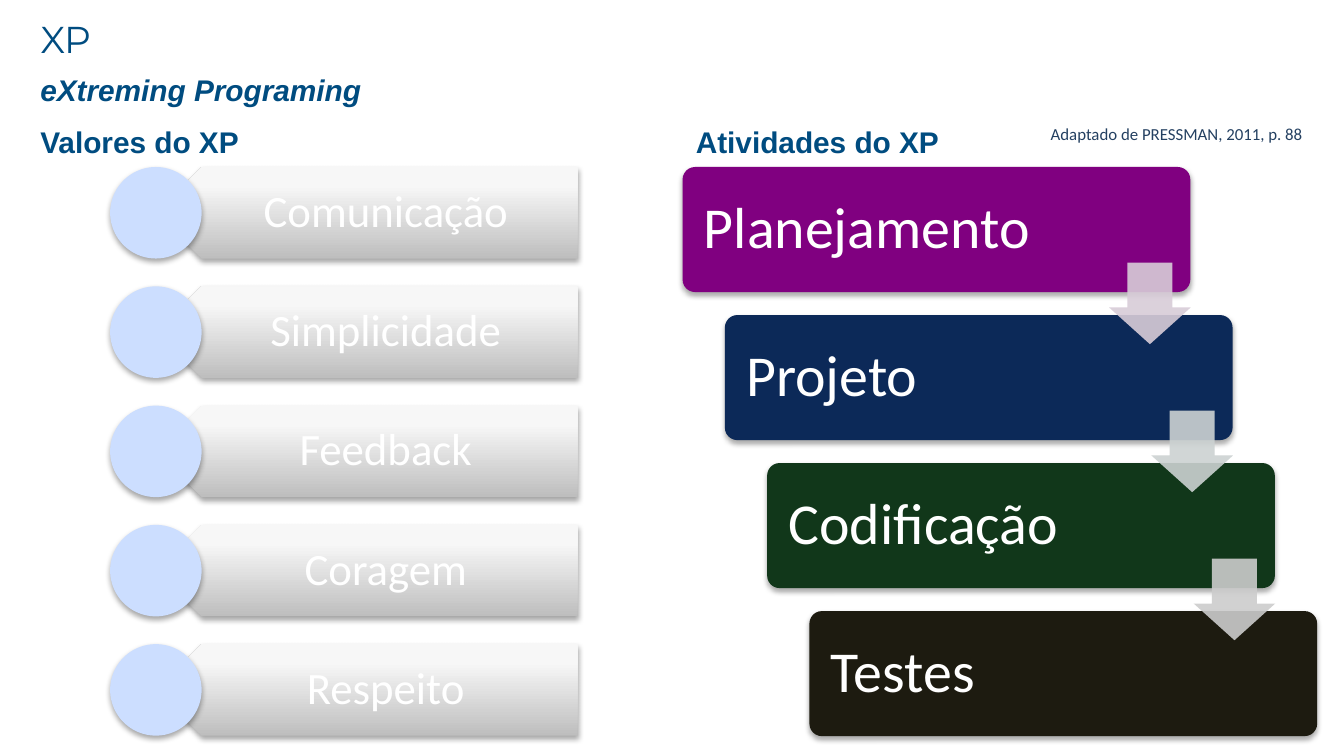
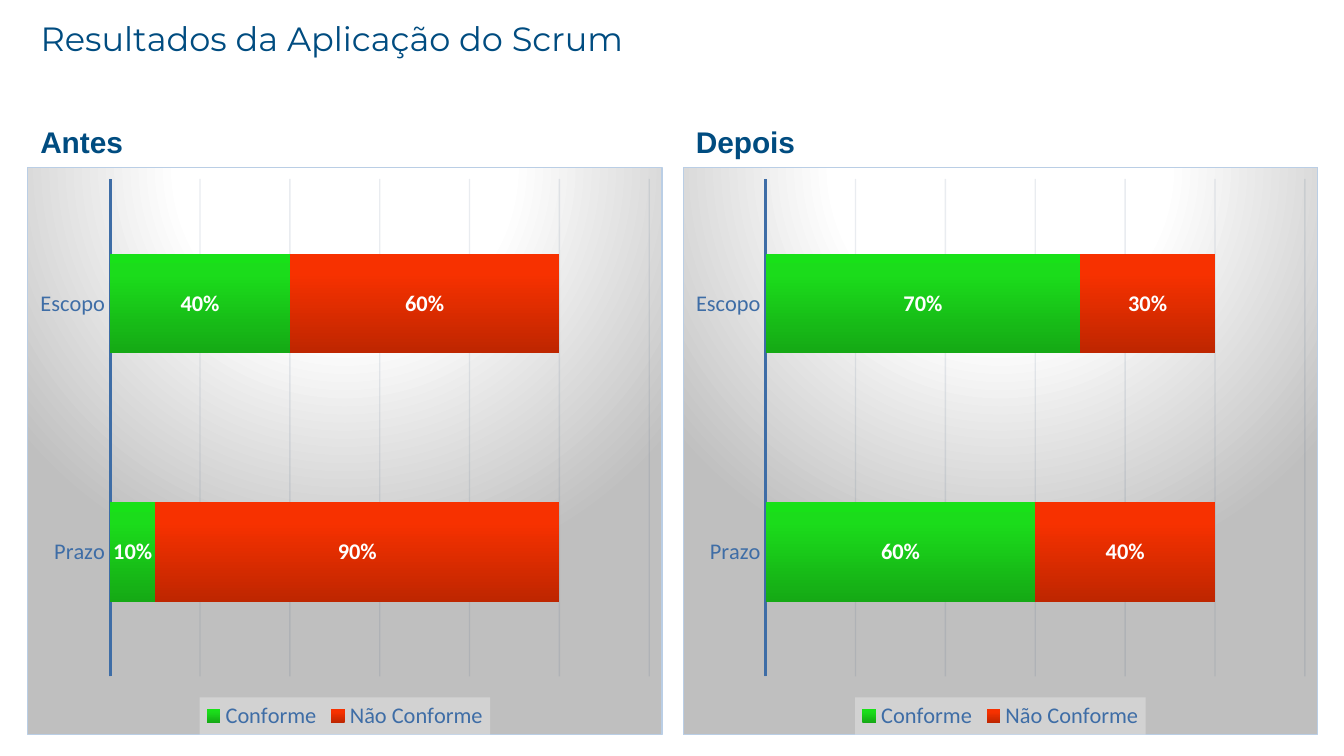
from typing import NamedTuple, Optional

from lxml import etree
from pptx import Presentation
from pptx.chart.data import CategoryChartData
from pptx.dml.color import RGBColor
from pptx.enum import chart as ch, shapes, text
from pptx.oxml.ns import nsdecls, qn
from pptx.oxml import parse_xml
from pptx.util import Pt

WHITE = RGBColor(0xFF, 0xFF, 0xFF)
HEADING = RGBColor(0x00, 0x4C, 0x80)
INK = RGBColor(0x24, 0x40, 0x61)
AXIS = RGBColor(0x3E, 0x6D, 0xA6)
GRID = RGBColor(0x29, 0x49, 0x6F)
DISC = RGBColor(0xCC, 0xDE, 0xFF)
CHART_BORDER = RGBColor(0xBA, 0xCE, 0xE5)
LEGEND_BACK = RGBColor(0xF2, 0xF2, 0xF2)

LEFT_COL, RIGHT_COL, COL_W = 14.5, 365.7, 340.5
BODY_TOP, BODY_H = 89.5, 304.5
LABEL_TOP, LABEL_H = 66.2, 19.4


class Box(NamedTuple):
    x: float
    y: float
    w: float
    h: float

    def points(self) -> list:
        return [Pt(v) for v in self]


class Style(NamedTuple):
    size: float
    color: RGBColor
    font: str = "Calibri"
    bold: bool = False
    italic: bool = False


class Gradient(NamedTuple):
    stops: tuple
    focus: Optional[tuple] = None  # left, top, right, bottom in percent


class Step(NamedTuple):
    name: str
    fill: RGBColor
    arrow: Optional[RGBColor] = None


class Results(NamedTuple):
    label: str
    x: float
    conforming: tuple
    failing: tuple


LABEL = Style(16, HEADING, "Arial", bold=True)
SUBTITLE = LABEL._replace(italic=True)
AXIS_TEXT = Style(12, AXIS)

SILVER = Gradient(((0, "BEBEBE"), (80, "F7F7F7"), (100, "F8F8F8")))
GREEN = Gradient(((0, "15A915"), (80, "1BDC1B"), (100, "18E118")))
RED = Gradient(((0, "BE2600"), (80, "F73100"), (100, "F83200")))
CHART_BACK = Gradient(((0, "FFFFFF"), (39, "FFFFFF"), (100, "BFBFBF")), (50, -80, 50, 180))

VALUES = ("Comunicação", "Simplicidade", "Feedback", "Coragem", "Respeito")
STEPS = (
    Step("Planejamento", RGBColor(0x80, 0x00, 0x80), RGBColor(0xD8, 0xCC, 0xD8)),
    Step("Projeto", RGBColor(0x0C, 0x29, 0x58), RGBColor(0xCC, 0xD2, 0xD2)),
    Step("Codificação", RGBColor(0x11, 0x37, 0x1A), RGBColor(0xCC, 0xCC, 0xCC)),
    Step("Testes", RGBColor(0x1D, 0x1B, 0x10)),
)
RESULTS = (
    Results("Antes", LEFT_COL, (0.1, 0.4), (0.9, 0.6)),
    Results("Depois", RIGHT_COL, (0.6, 0.7), (0.4, 0.3)),
)


def set_font(font, style: Style) -> None:
    font.size, font.name = Pt(style.size), style.font
    font.bold, font.italic = style.bold, style.italic
    font.color.rgb = style.color


def gradient_xml(grad: Gradient) -> str:
    stops = "".join(
        f'<a:gs pos="{pos * 1000}"><a:srgbClr val="{color}"/></a:gs>' for pos, color in grad.stops
    )
    if grad.focus:
        edges = " ".join(f'{side}="{v * 1000}"' for side, v in zip("ltrb", grad.focus))
        shade = f'<a:path path="circle"><a:fillToRect {edges}/></a:path>'
    else:
        shade = '<a:lin ang="16200000" scaled="0"/>'
    return f'<a:gradFill {nsdecls("a")} rotWithShape="0"><a:gsLst>{stops}</a:gsLst>{shade}</a:gradFill>'


def use_gradient(fill, sp_pr, grad: Gradient) -> None:
    fill.solid()
    sp_pr.replace(sp_pr.find(qn("a:solidFill")), parse_xml(gradient_xml(grad)))


def set_alpha(parent, percent: int) -> None:
    color = next(parent.iter(qn("a:srgbClr")))
    etree.SubElement(color, qn("a:alpha")).set("val", str(percent * 1000))


def chart_sp_pr(content: str):
    return parse_xml(f'<c:spPr {nsdecls("c", "a")}>{content}</c:spPr>')


def add_text(slide, box: Box, words: str, style: Style, align=text.PP_ALIGN.LEFT,
             anchor=text.MSO_ANCHOR.MIDDLE, insets=(7.2, 3.6, 7.2, 3.6),
             spacing: float = 1.0, wrap: bool = True):
    tf = slide.shapes.add_textbox(*box.points()).text_frame
    tf.word_wrap, tf.vertical_anchor = wrap, anchor
    tf.margin_left, tf.margin_top, tf.margin_right, tf.margin_bottom = map(Pt, insets)
    p = tf.paragraphs[0]
    p.alignment, p.line_spacing = align, spacing
    r = p.add_run()
    r.text = words
    set_font(r.font, style)
    return tf


def add_shape(slide, kind, box: Box, fill, shadow: bool = True, adjust=()):
    sp = slide.shapes.add_shape(kind, *box.points())
    for i, value in enumerate(adjust):
        sp.adjustments[i] = value
    if isinstance(fill, Gradient):
        use_gradient(sp.fill, sp._element.spPr, fill)
    else:
        sp.fill.solid()
        sp.fill.fore_color.rgb = fill
    sp.line.fill.background()
    sp.shadow.inherit = False
    if shadow:
        sp._element.spPr.find(qn("a:effectLst")).append(parse_xml(
            f'<a:outerShdw {nsdecls("a")} blurRad="{Pt(3.1)}" dist="{Pt(1.8)}" dir="5400000" '
            'rotWithShape="0"><a:srgbClr val="000000"><a:alpha val="35000"/></a:srgbClr></a:outerShdw>'
        ))
    return sp


def new_slide(prs, title: str, size: float):
    slide = prs.slides.add_slide(prs.slide_layouts[5])
    sp = slide.shapes.title
    sp.left, sp.top, sp.width, sp.height = Box(LEFT_COL, 8, 595.5, 25.2).points()
    tf = sp.text_frame
    tf.vertical_anchor, tf.auto_size = text.MSO_ANCHOR.MIDDLE, text.MSO_AUTO_SIZE.NONE
    p = tf.paragraphs[0]
    p.alignment = text.PP_ALIGN.LEFT
    r = p.add_run()
    r.text = title
    set_font(r.font, Style(size, HEADING, "Montserrat"))
    return slide


def add_label(slide, x: float, words: str) -> None:
    add_text(slide, Box(x, LABEL_TOP, COL_W, LABEL_H), words, LABEL)


def add_values(slide) -> None:
    size, pitch = 49, 63.9
    for i, name in enumerate(VALUES):
        y = BODY_TOP + i * pitch
        plate = add_shape(slide, shapes.MSO_SHAPE.PENTAGON, Box(83.5, y, 226, size), SILVER)
        plate.rotation = 180
        add_text(slide, Box(95.8, y, 213.8, size), name, Style(24, WHITE), text.PP_ALIGN.CENTER,
                 insets=(21.6, 7.2, 13.7, 7.2), spacing=0.9)
        add_shape(slide, shapes.MSO_SHAPE.OVAL, Box(59, y, size, size), DISC)


def add_steps(slide) -> None:
    corners = [(RIGHT_COL + 22.65 * i, BODY_TOP + 79.3 * i) for i in range(len(STEPS))]
    for step, (x, y) in zip(STEPS, corners):
        add_shape(slide, shapes.MSO_SHAPE.ROUNDED_RECTANGLE, Box(x, y, 272, 67), step.fill,
                  adjust=(0.1,))
        add_text(slide, Box(x + 2, y + 2, 201, 63), step.name, Style(31, WHITE),
                 insets=(9.4,) * 4, spacing=0.9)
    for step, (x, y) in zip(STEPS, corners):
        if step.arrow is not None:
            arrow = add_shape(slide, shapes.MSO_SHAPE.DOWN_ARROW, Box(x + 228.5, y + 51.2, 43.7, 43.7),
                              step.arrow, shadow=False, adjust=(0.55, 0.45))
            set_alpha(arrow._element.spPr, 90)


def add_results_chart(slide, results: Results) -> None:
    data = CategoryChartData(number_format="0%")
    data.categories = ["Prazo", "Escopo"]
    data.add_series("Conforme", results.conforming)
    data.add_series("Não Conforme", results.failing)
    box = Box(results.x, BODY_TOP, COL_W, BODY_H)
    chart = slide.shapes.add_chart(ch.XL_CHART_TYPE.BAR_STACKED, *box.points(), data).chart
    set_font(chart.font, Style(10, INK))
    chart.has_title = False
    chart._chartSpace.find(qn("c:chart")).addnext(chart_sp_pr(
        gradient_xml(CHART_BACK) + f'<a:ln w="{Pt(0.75)}"><a:solidFill>'
        f'<a:srgbClr val="{CHART_BORDER}"/></a:solidFill></a:ln>'
    ))

    plot = chart.plots[0]
    plot.gap_width, plot.overlap, plot.vary_by_categories = 150, 100, False
    for series, grad in zip(plot.series, (GREEN, RED)):
        series.invert_if_negative = False
        fill = series.format.fill
        use_gradient(fill, series._element.find(qn("c:spPr")), grad)
        labels = series.data_labels
        labels.show_value, labels.position = True, ch.XL_LABEL_POSITION.CENTER
        labels.number_format, labels.number_format_is_linked = "0%", False
        set_font(labels.font, Style(12, WHITE, bold=True))

    cat = chart.category_axis
    cat.major_tick_mark = cat.minor_tick_mark = ch.XL_TICK_MARK.NONE
    cat.format.line.color.rgb, cat.format.line.width = AXIS, Pt(1.5)
    set_font(cat.tick_labels.font, AXIS_TEXT)

    val = chart.value_axis
    val.minimum_scale, val.maximum_scale, val.major_unit = 0, 1.2, 0.2
    val.tick_labels.number_format, val.tick_labels.number_format_is_linked = "0%", False
    val.has_major_gridlines, val.visible = True, False
    grid = val.major_gridlines.format.line
    grid.color.rgb, grid.width = GRID, Pt(0.75)
    set_alpha(val._element.find(qn("c:majorGridlines")), 10)

    chart.has_legend = True
    legend = chart.legend
    legend.position, legend.include_in_layout = ch.XL_LEGEND_POSITION.BOTTOM, False
    set_font(legend.font, AXIS_TEXT)
    back = chart_sp_pr(f'<a:solidFill><a:srgbClr val="{LEGEND_BACK}"/></a:solidFill>')
    set_alpha(back, 39)
    legend._element.find(qn("c:overlay")).addnext(back)


def build_xp_slide(prs) -> None:
    slide = new_slide(prs, "XP", 20)
    add_values(slide)
    add_label(slide, LEFT_COL, "Valores do XP")
    add_label(slide, RIGHT_COL, "Atividades do XP")
    add_text(slide, Box(LEFT_COL, 38.2, 595.5, LABEL_H), "eXtreming Programing", SUBTITLE)
    add_steps(slide)
    tf = add_text(slide, Box(555.8, 62.6, 150.5, 18), "Adaptado de PRESSMAN, 2011, p. 88",
                  Style(9, INK), anchor=text.MSO_ANCHOR.TOP, wrap=False)
    tf.auto_size = text.MSO_AUTO_SIZE.SHAPE_TO_FIT_TEXT


def build_results_slide(prs) -> None:
    slide = new_slide(prs, "Resultados da Aplicação do Scrum", 18)
    for results in RESULTS:
        add_results_chart(slide, results)
        add_label(slide, results.x, results.label)


def main() -> None:
    prs = Presentation()
    prs.slide_width, prs.slide_height = Pt(720), Pt(405)
    build_xp_slide(prs)
    build_results_slide(prs)
    prs.save("out.pptx")


if __name__ == "__main__":
    main()
